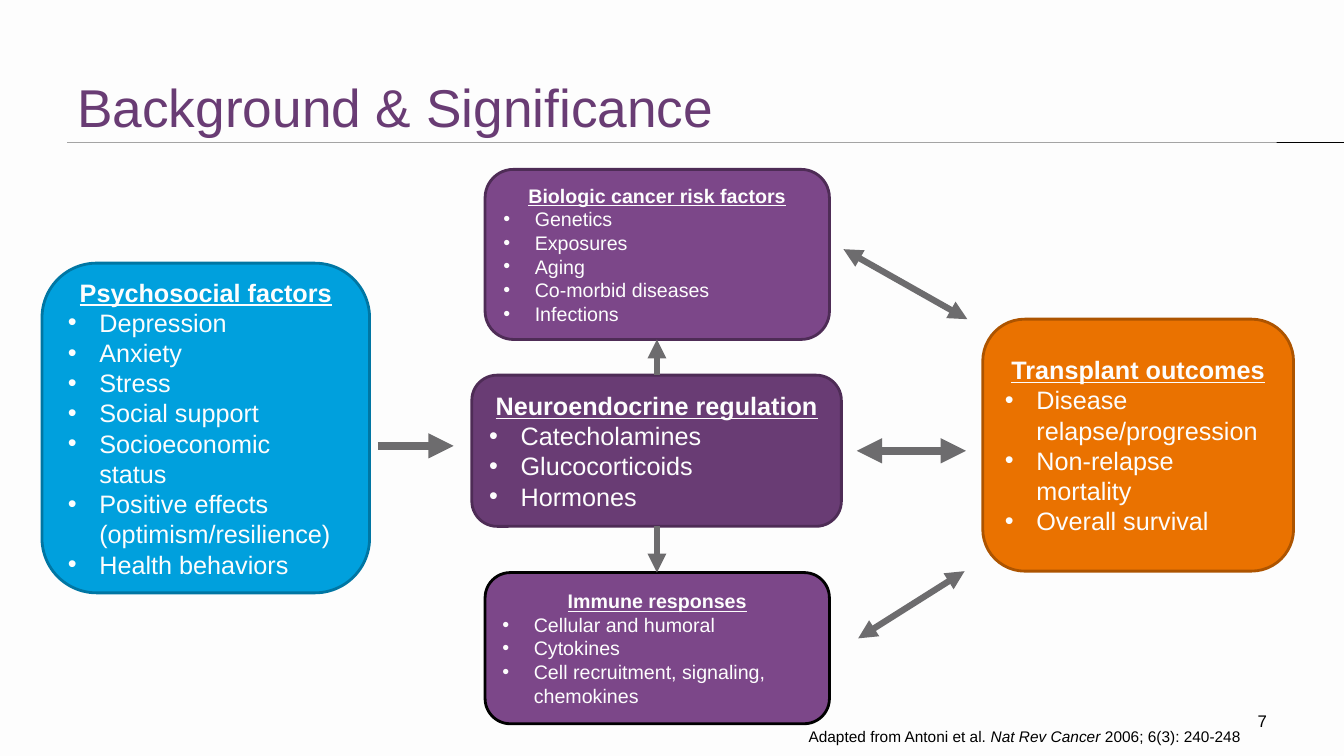
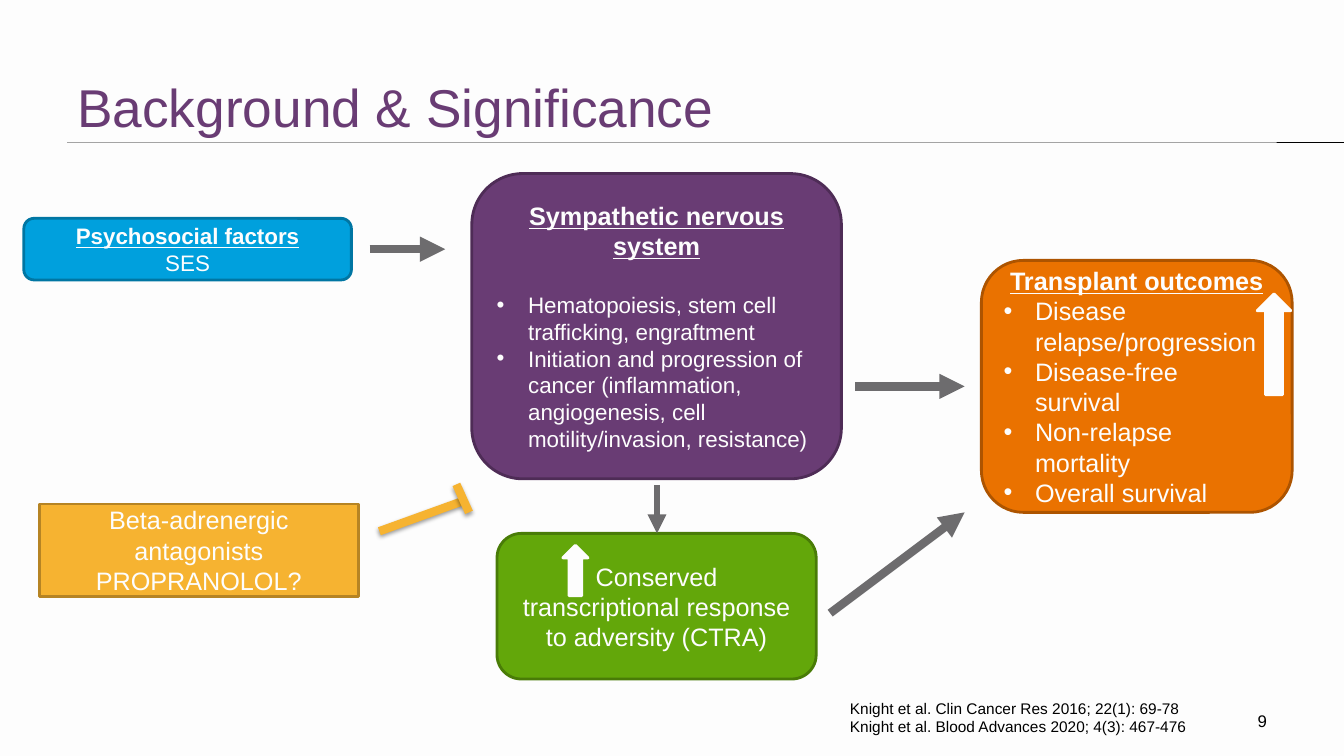
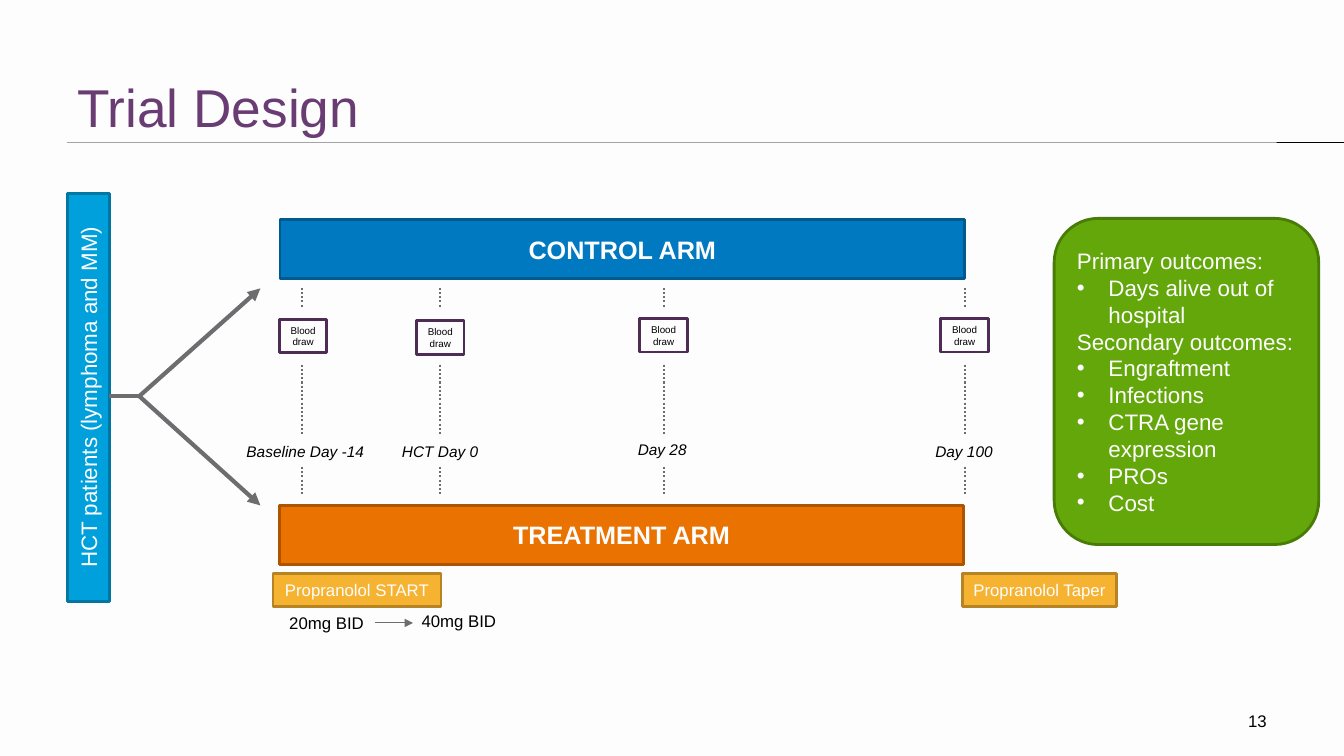
from dataclasses import dataclass

from lxml import etree
from pptx import Presentation
from pptx.dml.color import RGBColor
from pptx.enum import dml, shapes, text
from pptx.oxml.ns import qn
from pptx.util import Pt


@dataclass(frozen=True)
class Theme:
    font: str = "Arial"
    paper: str = "FDFDFD"
    ink: str = "000000"
    grey: str = "6D6C6E"
    title: str = "693C74"
    amber: str = "F6B331"
    title_size: float = 38
    large: float = 18
    medium: float = 16
    small: float = 14
    label: float = 12
    note: float = 11
    tiny: float = 7
    outline: float = 2
    arrow: float = 6
    thin_arrow: float = 4.5
    branch: float = 3
    dots: float = 1.5
    hairline: float = 0.75
    indent: float = 22.5


T = Theme()

# Box colours: fill, outline
SKY = ("00A0DD", "0076A3")
PLUM = (T.title, "4E2C56")
LILAC = ("7C4789", "4E2C56")
LILAC_DARK = ("7C4789", T.ink)
ORANGE = ("EA7200", "AD5400")
GREEN = ("63A70A", "497C07")
AMBER = (T.amber, "B68424")
BLUE = ("0079C1", "005A8F")
WHITE = (T.paper, T.paper)
HOLLOW = (None, "4E2C56")

ROUND = shapes.MSO_SHAPE.ROUNDED_RECTANGLE
RECT = shapes.MSO_SHAPE.RECTANGLE
UP = shapes.MSO_SHAPE.UP_ARROW

# Paragraph roles: alignment, bold, underlined, bulleted
ROLES = {
    "head": (text.PP_ALIGN.CENTER, True, True, False),
    "strong": (text.PP_ALIGN.CENTER, True, False, False),
    "center": (text.PP_ALIGN.CENTER, False, False, False),
    "left": (text.PP_ALIGN.LEFT, False, False, False),
    "right": (text.PP_ALIGN.RIGHT, False, False, False),
    "item": (text.PP_ALIGN.LEFT, False, False, True),
}


def headed(heading, *items):
    return [("head", heading)] + [("item", item) for item in items]


# Boxes: preset, (left, top, width, height), colours, type size, paragraphs
FACTOR_BOXES = [
    (ROUND, (30, 188, 234, 235.5), SKY, T.large, headed(
        "Psychosocial factors", "Depression", "Anxiety", "Stress", "Social support",
        "Socioeconomic status", "Positive effects (optimism/resilience)",
        "Health behaviors")),
    (ROUND, (337, 268, 264, 108), PLUM, T.large, headed(
        "Neuroendocrine regulation", "Catecholamines", "Glucocorticoids", "Hormones")),
    (ROUND, (346.5, 121, 246, 121.5), LILAC, T.small, headed(
        "Biologic cancer risk factors", "Genetics", "Exposures", "Aging",
        "Co-morbid diseases", "Infections")),
    (ROUND, (346.5, 409, 246, 108), LILAC_DARK, T.small, headed(
        "Immune responses", "Cellular and humoral", "Cytokines",
        "Cell recruitment, signaling, chemokines")),
    (ROUND, (702, 228, 222, 180), ORANGE, T.large, headed(
        "Transplant outcomes", "Disease relapse/progression",
        "Non-relapse mortality", "Overall survival")),
]
# Arrows: from, to, width, arrowheads
FACTOR_ARROWS = [
    ((270, 318.5), (324, 318.5), T.arrow, ["tail"]),
    ((469.25, 268), (469.25, 242.5), T.thin_arrow, ["tail"]),
    ((469.25, 376), (469.25, 409), T.thin_arrow, ["tail"]),
    ((612, 322), (690, 322), T.arrow, ["head", "tail"]),
    ((613, 456), (689, 408), T.thin_arrow, ["head", "tail"]),
    ((602.5, 178), (691, 228), T.thin_arrow, ["head", "tail"]),
]

NERVOUS_SYSTEM = (ROUND, (337, 124, 264, 218), PLUM, T.medium, headed(
    "Sympathetic nervous system",
    "Hematopoiesis, stem cell trafficking, engraftment",
    "Initiation and progression of cancer (inflammation, angiogenesis, cell "
    "motility/invasion, resistance)"))
PATHWAY_BOXES = [
    (ROUND, (17, 156, 234, 44), SKY, T.medium,
     [("head", "Psychosocial factors"), ("center", "SES")]),
    (ROUND, (701, 186, 222, 180), ORANGE, T.large, headed(
        "Transplant outcomes", "Disease relapse/progression", "Disease-free survival",
        "Non-relapse mortality", "Overall survival")),
    (ROUND, (355, 381, 228, 104), GREEN, T.large,
     [("center", "Conserved transcriptional response to adversity (CTRA)")]),
    (RECT, (28, 360, 228, 66), AMBER, T.large,
     [("center", "Beta-adrenergic antagonists"), ("center", "PROPRANOLOL?")]),
    (UP, (402, 389.5, 18, 36), WHITE, T.large, []),
    (UP, (898, 210, 24, 72), WHITE, T.large, []),
]
PATHWAY_ARROWS = [
    ((264, 178), (318, 178), T.arrow, ["tail"]),
    ((611, 276), (689, 276), T.arrow, ["tail"]),
    ((469.25, 346.5), (469.25, 381), T.thin_arrow, ["tail"]),
    ((593, 438), (689, 366), T.arrow, ["tail"]),
]
INHIBITOR = [((271, 379.5), (329, 358.5)), ((335, 366), (326, 346))]

TRIAL_BOXES = [
    (RECT, (200, 157, 489, 42), BLUE, T.large, [("strong", "CONTROL ARM")]),
    (RECT, (199.5, 361, 489, 42), ORANGE, T.large, [("strong", "TREATMENT ARM")]),
    (RECT, (195, 409.5, 120, 24), AMBER, T.label, [("center", "Propranolol START")]),
    (RECT, (687.5, 409.5, 110, 24), AMBER, T.label, [("center", "Propranolol Taper")]),
    (ROUND, (753, 156, 189, 233), GREEN, T.medium, [
        ("left", "Primary outcomes:"), ("item", "Days alive out of hospital"),
        ("left", "Secondary outcomes:"), ("item", "Engraftment"),
        ("item", "Infections"), ("item", "CTRA gene expression"),
        ("item", "PROs"), ("item", "Cost")]),
]
PATIENTS = (RECT, (48, 138, 30, 291.5), SKY, T.medium,
            [("center", "HCT patients (lymphoma and MM)")])
TRIAL_ARROWS = [
    ((78, 283), (100, 283), T.branch, []),
    ((99.5, 283), (186, 206), T.branch, ["tail"]),
    ((99.5, 283), (186, 361), T.branch, ["tail"]),
    ((268, 445), (295, 445), T.hairline, ["tail"]),
]
DOSES = [("20mg BID", (199.5, 434, 68.5, 21.5)), ("40mg BID", (294, 432.5, 68.5, 21.5))]
# Visits: name, dotted line x, blood draw (left, top), label (left, top, width)
VISITS = [
    ("Baseline Day -14", 216, (199.5, 228), (169, 312, 99.5)),
    ("HCT Day 0", 314.5, (297.5, 229), (280, 312.5, 70)),
    ("Day 28", 474, (457, 227.5), (448.5, 310.5, 49.5)),
    ("Day 100", 689, (672, 227.5), (661, 312.5, 56)),
]
DOTTED_SPANS = [(205.5, 220.5), (260.5, 310.5), (333.5, 354)]


def rgb(colour):
    return RGBColor.from_string(colour)


def points(values):
    return [Pt(value) for value in values]


def add_run(paragraph, words, size, colour, bold=False, underline=False, italic=False):
    run = paragraph.add_run()
    run.text = words
    font = run.font
    font.name, font.size = T.font, Pt(size)
    font.bold, font.underline, font.italic = bold, underline, italic
    font.color.rgb = rgb(colour)
    return run


def add_bullet(paragraph):
    properties = paragraph._p.get_or_add_pPr()
    properties.set("marL", str(Pt(T.indent)))
    properties.set("indent", str(-Pt(T.indent)))
    etree.SubElement(properties, qn("a:buFont")).set("typeface", T.font)
    etree.SubElement(properties, qn("a:buChar")).set("char", "•")


def write(frame, paragraphs, size, colour):
    for index, (role, words) in enumerate(paragraphs):
        paragraph = frame.paragraphs[0] if index == 0 else frame.add_paragraph()
        align, bold, underline, bulleted = ROLES[role]
        if bulleted:
            add_bullet(paragraph)
        paragraph.alignment = align
        add_run(paragraph, words, size, colour, bold, underline)


def add_box(slide, preset, place, colours, size, paragraphs, ink=T.paper):
    box = slide.shapes.add_shape(preset, *points(place))
    fill, outline = colours
    box.shadow.inherit = False
    if fill:
        box.fill.solid()
        box.fill.fore_color.rgb = rgb(fill)
    else:
        box.fill.background()
    box.line.color.rgb = rgb(outline)
    box.line.width = Pt(T.outline)
    box.text_frame.word_wrap = True
    box.text_frame.vertical_anchor = text.MSO_ANCHOR.MIDDLE
    write(box.text_frame, paragraphs, size, ink)
    return box


def add_line(slide, start, end, width, ends=(), colour=T.grey, dash=None, shadow=False):
    """Draw a line; ends names its arrowheads, head at the start and tail at the end."""
    line = slide.shapes.add_connector(
        shapes.MSO_CONNECTOR.STRAIGHT, *points(start + end))
    line.line.color.rgb = rgb(colour)
    line.line.width = Pt(width)
    if dash:
        line.line.dash_style = dash
    for end_name in ends:
        etree.SubElement(line.line._ln, qn(f"a:{end_name}End")).set("type", "triangle")
    effects = etree.SubElement(line.element.spPr, qn("a:effectLst"))
    if shadow:
        outer = etree.SubElement(effects, qn("a:outerShdw"), blurRad=str(Pt(3.1)),
                                 dist=str(Pt(1.6)), dir="5400000", rotWithShape="0")
        black = etree.SubElement(outer, qn("a:srgbClr"), val=T.ink)
        etree.SubElement(black, qn("a:alpha"), val="38000")
    return line


def add_text(slide, place, wrap=True):
    frame = slide.shapes.add_textbox(*points(place)).text_frame
    frame.word_wrap = wrap
    frame.auto_size = text.MSO_AUTO_SIZE.SHAPE_TO_FIT_TEXT
    return frame


def add_diagram(slide, boxes, arrows):
    for box in boxes:
        add_box(slide, *box)
    for arrow in arrows:
        add_line(slide, *arrow)


def new_slide(deck, heading, number):
    slide = deck.slides.add_slide(deck.slide_layouts[5])
    title = slide.shapes.title
    title.left, title.top, title.width, title.height = points((48, 12, 864, 90))
    title.fill.solid()
    title.fill.fore_color.rgb = rgb(T.paper)
    title.text_frame.vertical_anchor = text.MSO_ANCHOR.BOTTOM
    write(title.text_frame, [("left", heading)], T.title_size, T.title)
    page = add_text(slide, (864, 500.5, 48, 29))
    page.auto_size = text.MSO_AUTO_SIZE.NONE
    page.vertical_anchor = text.MSO_ANCHOR.MIDDLE
    write(page, [("right", number)], T.label, T.ink)
    return slide


def share_title_rule(slide):
    """Move the rule to the layout, where it lies behind every title."""
    rule = add_line(slide, (48, 102), (960, 102), T.hairline, colour=T.ink)
    slide.slide_layout.shapes[0].element.addprevious(rule.element)


def factors_slide(deck):
    slide = new_slide(deck, "Background & Significance", "7")
    share_title_rule(slide)
    add_diagram(slide, FACTOR_BOXES, FACTOR_ARROWS)
    citation = add_text(slide, (570.5, 515.5, 324.5, 21)).paragraphs[0]
    for words, italic in [("Adapted from Antoni et al. ", False),
                          ("Nat Rev Cancer ", True), ("2006; 6(3): 240-248", False)]:
        add_run(citation, words, T.note, T.ink, italic=italic)


def pathway_slide(deck):
    slide = new_slide(deck, "Background & Significance", "9")
    nervous_system = add_box(slide, *NERVOUS_SYSTEM).text_frame.paragraphs
    nervous_system[0].runs[0].font.size = Pt(T.large)
    nervous_system[1].space_before = Pt(21.6)
    add_diagram(slide, PATHWAY_BOXES, PATHWAY_ARROWS)
    for start, end in INHIBITOR:
        add_line(slide, start, end, T.arrow, colour=T.amber, shadow=True)
    write(add_text(slide, (600, 495.5, 264, 34)), [
        ("left", "Knight et al. Clin Cancer Res 2016; 22(1): 69-78"),
        ("left", "Knight et al. Blood Advances 2020; 4(3): 467-476")], T.note, T.ink)


def trial_slide(deck):
    slide = new_slide(deck, "Trial Design", "13")
    patients = add_box(slide, *PATIENTS)
    patients.element.txBody.bodyPr.set("vert", "vert270")
    add_diagram(slide, TRIAL_BOXES, TRIAL_ARROWS)
    for dose, place in DOSES:
        write(add_text(slide, place, wrap=False), [("left", dose)], T.label, T.ink)
    for visit, x, draw, (left, top, width) in VISITS:
        add_box(slide, RECT, draw + (34, 24), HOLLOW, T.tiny,
                [("center", "Blood draw")], T.ink)
        label = add_text(slide, (left, top, width, 21), wrap=False)
        add_run(label.paragraphs[0], visit, T.note, T.ink, italic=True)
        for upper, lower in DOTTED_SPANS:
            add_line(slide, (x, upper), (x, lower), T.dots,
                     dash=dml.MSO_LINE.ROUND_DOT)


def main():
    deck = Presentation()
    deck.slide_width, deck.slide_height = points((960, 540))
    background = deck.slide_master.background.fill
    background.solid()
    background.fore_color.rgb = rgb(T.paper)
    factors_slide(deck)
    pathway_slide(deck)
    trial_slide(deck)
    deck.save("out.pptx")


if __name__ == "__main__":
    main()
